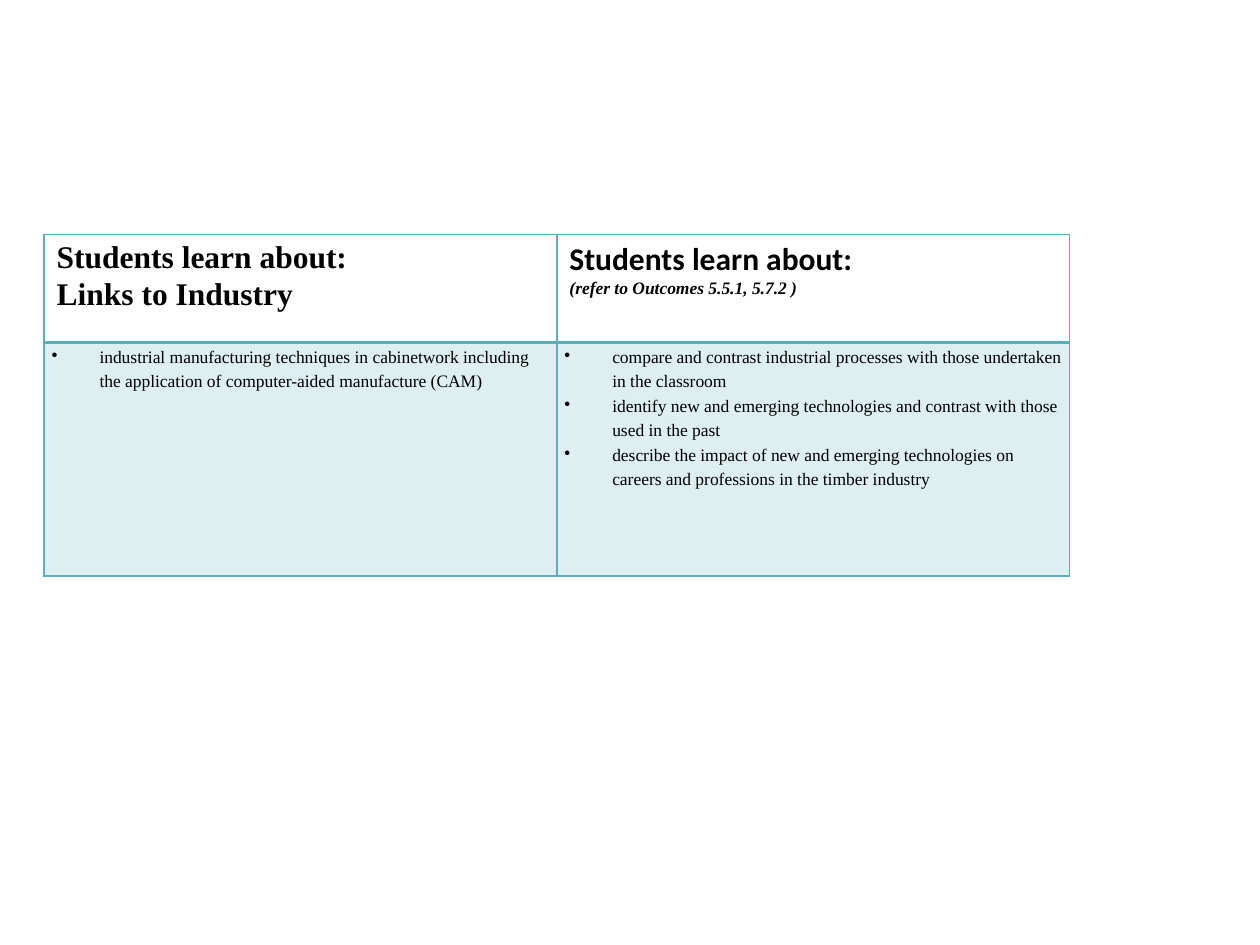
"""Build a slide with a two-column syllabus table on links to industry."""
from dataclasses import dataclass

from pptx import Presentation
from pptx.dml.color import RGBColor
from pptx.oxml.ns import qn
from pptx.util import Inches, Pt
from lxml.etree import SubElement

TEAL = "59B0B9"
SERIF = "Times New Roman"


@dataclass
class Line:
    text: str
    size: float = 18
    font: str = SERIF
    bold: bool = True
    italic: bool = False
    before: float = 0


@dataclass
class Column:
    heading: list[Line]
    points: list[str]


COLUMNS = [
    Column(
        [Line("Students learn about:"), Line("Links to Industry", before=1)],
        ["industrial manufacturing techniques in cabinetwork including "
         "the application of computer-aided manufacture (CAM)"],
    ),
    Column(
        [Line("Students learn about:", font="Calibri"),
         Line("(refer to Outcomes 5.5.1, 5.7.2 )", size=10, italic=True)],
        ["compare and contrast industrial processes with those undertaken in the classroom",
         "identify new and emerging technologies and contrast with those used in the past",
         "describe the impact of new and emerging technologies on careers and "
         "professions in the timber industry"],
    ),
]


def color(value: str) -> RGBColor:
    return RGBColor.from_string(value)


def set_borders(cell, top: float = 1, bottom: float = 1) -> None:
    properties = cell._tc.get_or_add_tcPr()
    for side, width in (("L", 1), ("R", 1), ("T", top), ("B", bottom)):
        border = SubElement(properties, qn(f"a:ln{side}"), w=str(Pt(width)))
        SubElement(SubElement(border, qn("a:solidFill")), qn("a:srgbClr"), val=TEAL)


def tint(cell, value: str, percent: int) -> None:
    cell.fill.solid()
    cell.fill.fore_color.rgb = color(value)
    shade = cell._tc.tcPr.find(qn("a:solidFill")).find(qn("a:srgbClr"))
    SubElement(shade, qn("a:alpha"), val=str(percent * 1000))


def add_bullet(para) -> None:
    properties = para._p.get_or_add_pPr()
    properties.set("marL", str(Inches(0.38)))
    properties.set("indent", str(Inches(-0.38)))
    SubElement(properties, qn("a:buChar"), char="•")
    tabs = SubElement(properties, qn("a:tabLst"))
    SubElement(tabs, qn("a:tab"), pos=str(Inches(0.25)), algn="l")
    para.line_spacing = Pt(14)


def write(para, text: str, *, size: float = 10, font: str = SERIF,
          bold: bool = False, italic: bool = False, before: float = 0) -> None:
    para.space_before = Pt(before)
    span = para.add_run()
    span.text = text
    span.font.size = Pt(size)
    span.font.name = font
    span.font.bold = bold
    span.font.italic = italic
    span.font.color.rgb = color("000000")


def next_paragraph(cell, index: int):
    frame = cell.text_frame
    return frame.add_paragraph() if index else frame.paragraphs[0]


def fill_heading(cell, lines: list[Line]) -> None:
    set_borders(cell, bottom=2)
    cell.fill.background()
    for index, line in enumerate(lines):
        write(next_paragraph(cell, index), line.text, size=line.size, font=line.font,
              bold=line.bold, italic=line.italic, before=line.before)


def fill_points(cell, points: list[str]) -> None:
    set_borders(cell, top=2)
    tint(cell, TEAL, 20)
    cell.margin_left = cell.margin_right = Inches(0.06)
    cell.margin_top = cell.margin_bottom = 0
    for index, point in enumerate(points):
        para = next_paragraph(cell, index)
        add_bullet(para)
        write(para, point)


def main() -> None:
    deck = Presentation()
    deck.slide_width, deck.slide_height = Inches(10), Inches(7.5)
    page = deck.slides.add_slide(deck.slide_layouts[6])
    table = page.shapes.add_table(2, len(COLUMNS), Inches(0.35), Inches(1.86),
                                  Inches(8.14), Inches(2.71)).table
    table.first_row = table.horz_banding = False
    for row, height in zip(table.rows, (0.86, 1.85)):
        row.height = Inches(height)
    for index, column in enumerate(COLUMNS):
        table.columns[index].width = Inches(4.07)
        fill_heading(table.cell(0, index), column.heading)
        fill_points(table.cell(1, index), column.points)
    deck.save("out.pptx")


if __name__ == "__main__":
    main()
